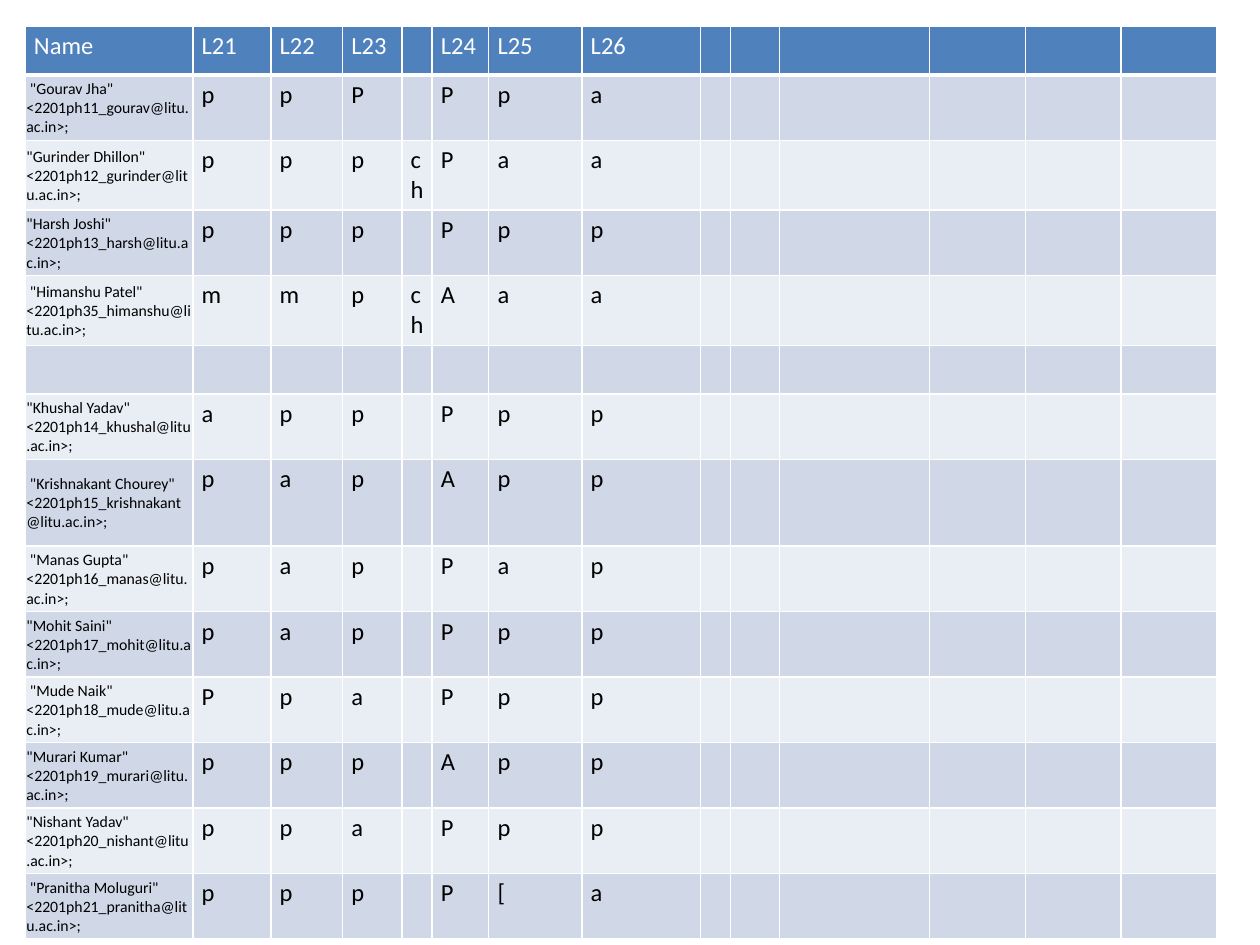
from lxml.etree import SubElement
from pptx import Presentation
from pptx.dml.color import RGBColor
from pptx.enum.text import MSO_ANCHOR as Anchor
from pptx.oxml.ns import qn
from pptx.util import Pt

HEADINGS = ["Name", "L21", "L22", "L23", "", "L24", "L25", "L26"]
STUDENTS = [
    (' "Gourav Jha"', "11_gourav", "p,p,P,,P,p,a"),
    ('"Gurinder Dhillon"', "12_gurinder", "p,p,p,ch,P,a,a"),
    ('"Harsh Joshi"', "13_harsh", "p,p,p,,P,p,p"),
    (' "Himanshu Patel"', "35_himanshu", "m,m,p,ch,A,a,a"),
    None,
    ('"Khushal Yadav"', "14_khushal", "a,p,p,,P,p,p"),
    (' "Krishnakant Chourey"', "15_krishnakant", "p,a,p,,A,p,p"),
    (' "Manas Gupta"', "16_manas", "p,a,p,,P,a,p"),
    ('"Mohit Saini"', "17_mohit", "p,a,p,,P,p,p"),
    (' "Mude Naik"', "18_mude", "P,p,a,,P,p,p"),
    ('"Murari Kumar"', "19_murari", "p,p,p,,A,p,p"),
    ('"Nishant Yadav"', "20_nishant", "p,p,a,,P,p,p"),
    (' "Pranitha Moluguri"', "21_pranitha", "p,p,p,,P,[,a"),
]
COLUMN_WIDTHS = [133, 62, 57, 47, 24, 45, 74, 94, 24, 39, 119, 76, 76, 76]
SHORT_ROW, STUDENT_ROW, TALL_ROW = 38, 52, 69
ROW_HEIGHTS = [SHORT_ROW] + [STUDENT_ROW if student else SHORT_ROW for student in STUDENTS]
ROW_HEIGHTS[7] = TALL_ROW
LEFT, TOP = 20, 21
SLIDE_WIDTH, SLIDE_HEIGHT = 1000, 750

THEME = {
    "font": "Calibri", "mark_size": 14, "name_size": 9,
    "header": "4F81BD", "bands": ("D0D8E8", "E9EDF4"),
    "header_text": "FFFFFF", "text": "000000",
    "border": "FFFFFF", "border_width": 1, "header_border_width": 3,
}


def px(value):
    return value * 9144


MARK_FORMAT = {
    "margin_left": px(7), "margin_right": px(7),
    "margin_top": px(4), "margin_bottom": px(4), "vertical_anchor": Anchor.TOP,
}
NAME_FORMAT = {
    "margin_left": px(1), "margin_right": px(1),
    "margin_top": px(1), "margin_bottom": 0, "vertical_anchor": Anchor.MIDDLE,
}


def apply_format(target, values):
    for name, value in values.items():
        setattr(target, name, value)


def student_texts(student):
    if student is None:
        return []
    name, login, marks = student
    return [f"{name} <2201ph{login}@litu.ac.in>;"] + marks.split(",")


def add_borders(cell, is_header):
    properties = cell._tc.get_or_add_tcPr()
    for side in "LRTB":
        heavy = is_header and side == "B"
        width = THEME["header_border_width" if heavy else "border_width"]
        line = SubElement(properties, qn(f"a:ln{side}"), w=str(Pt(width)))
        fill = SubElement(line, qn("a:solidFill"))
        SubElement(fill, qn("a:srgbClr"), val=THEME["border"])


def fill_cell(cell, text, row, column):
    is_header = row == 0
    is_name = column == 0 and not is_header and bool(text)
    add_borders(cell, is_header)
    cell.fill.solid()
    color = THEME["header"] if is_header else THEME["bands"][(row - 1) % 2]
    cell.fill.fore_color.rgb = RGBColor.from_string(color)
    apply_format(cell, NAME_FORMAT if is_name else MARK_FORMAT)
    if text:
        span = cell.text_frame.paragraphs[0].add_run()
        span.text = text
        size = THEME["name_size" if is_name else "mark_size"]
        apply_format(span.font, {"name": THEME["font"], "size": Pt(size), "bold": False})
        text_color = THEME["header_text" if is_header else "text"]
        span.font.color.rgb = RGBColor.from_string(text_color)


def main():
    deck = Presentation()
    apply_format(deck, {"slide_width": px(SLIDE_WIDTH), "slide_height": px(SLIDE_HEIGHT)})
    page = deck.slides.add_slide(deck.slide_layouts[6])
    attendance = page.shapes.add_table(
        len(ROW_HEIGHTS), len(COLUMN_WIDTHS), px(LEFT), px(TOP),
        px(sum(COLUMN_WIDTHS)), px(sum(ROW_HEIGHTS)),
    ).table
    apply_format(attendance, {"first_row": False, "horz_banding": False})
    for column, width in zip(attendance.columns, COLUMN_WIDTHS):
        column.width = px(width)
    for row, height in zip(attendance.rows, ROW_HEIGHTS):
        row.height = px(height)
    for row, texts in enumerate([HEADINGS] + [student_texts(student) for student in STUDENTS]):
        padded = texts + [""] * (len(COLUMN_WIDTHS) - len(texts))
        for column, text in enumerate(padded):
            fill_cell(attendance.cell(row, column), text, row, column)
    deck.save("out.pptx")


if __name__ == "__main__":
    main()
